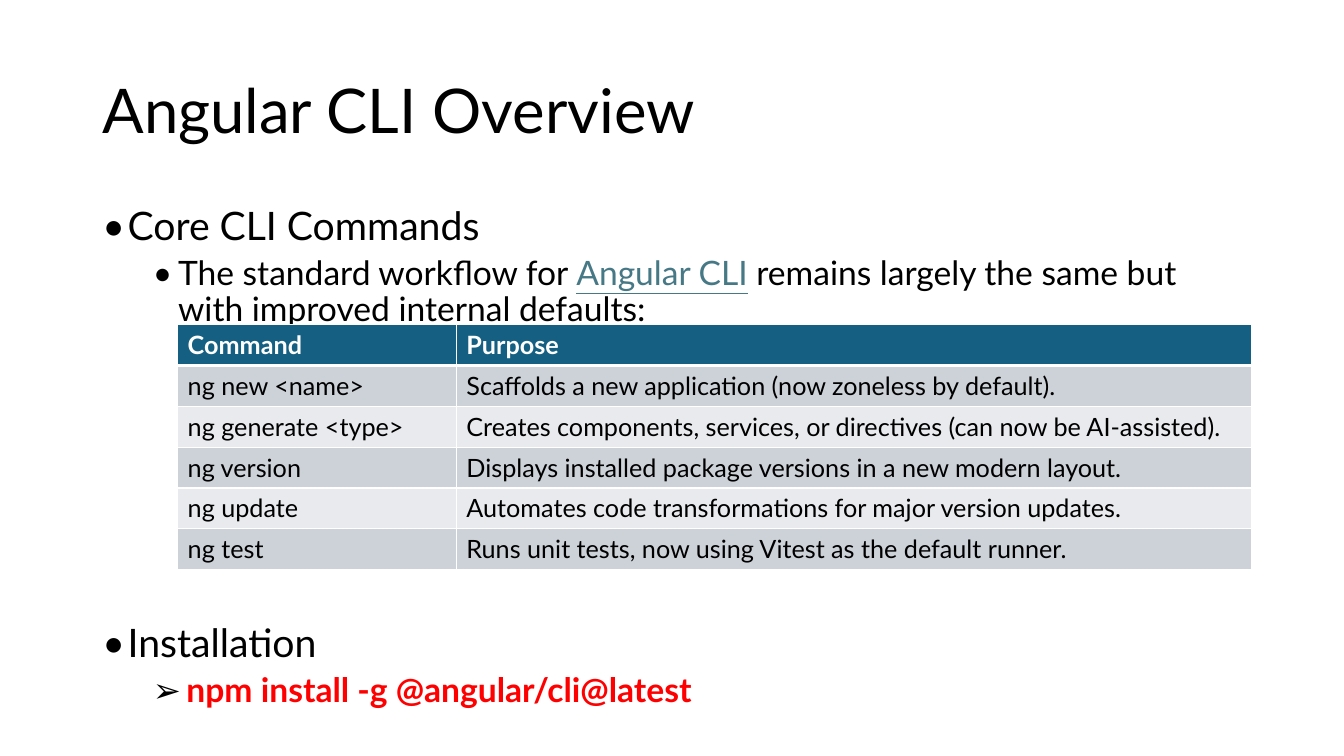
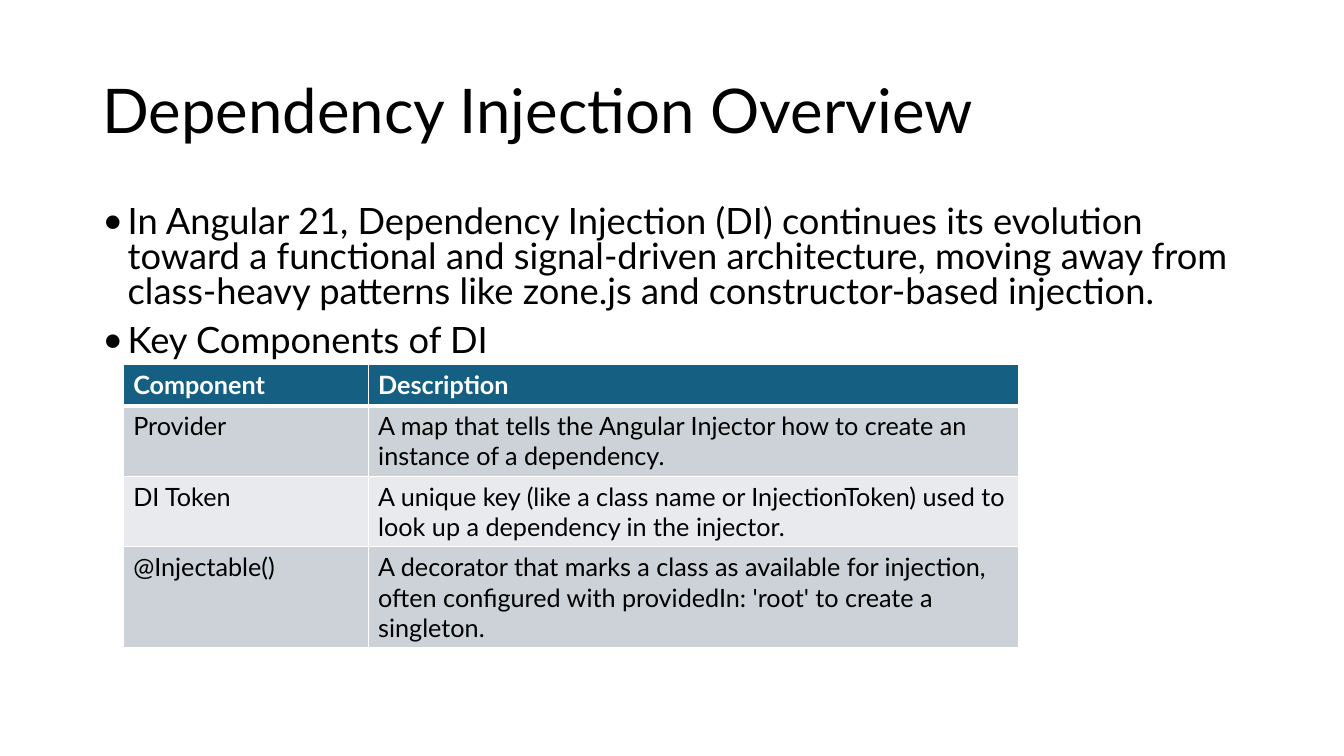
"""Build two Angular overview slides, each with a bullet list and a table."""
from dataclasses import dataclass

import lxml.etree
import pptx
import pptx.dml.color
import pptx.enum.text
import pptx.oxml.ns
import pptx.presentation
import pptx.shapes.autoshape
import pptx.slide
import pptx.table
import pptx.text.text
import pptx.util

Pt = pptx.util.Pt
RGBColor = pptx.dml.color.RGBColor
qn = pptx.oxml.ns.qn

BLACK = RGBColor(0x00, 0x00, 0x00)
WHITE = RGBColor(0xFF, 0xFF, 0xFF)
RED = RGBColor(0xFF, 0x00, 0x00)
LINK = RGBColor(0x46, 0x78, 0x86)
HEADER = RGBColor(0x15, 0x60, 0x82)
BANDS = (RGBColor(0xCC, 0xD2, 0xD8), RGBColor(0xE8, 0xEA, 0xED))
FONT = "Lato"
LEFT, WIDTH = 66, 828
TITLE_TOP, TITLE_HEIGHT = 28.8, 104.4
BODY_TOP = 144
HANGING = 18


@dataclass(frozen=True)
class Span:
    text: str
    color: RGBColor = BLACK
    bold: bool = False
    underline: bool = False


@dataclass(frozen=True)
class Bullet:
    spans: tuple[Span, ...]
    size: float
    level: int = 0
    before: float = 10
    symbol: str = "•"
    margin: float = 18
    hanging: float = HANGING


@dataclass(frozen=True)
class Grid:
    left: float
    top: float
    widths: tuple[float, ...]
    heights: tuple[float, ...]
    rows: tuple[tuple[str, ...], ...]


@dataclass(frozen=True)
class Page:
    title: str
    bullets: tuple[Bullet, ...]
    body_height: float
    line_spacing: float
    grid: Grid


PAGES = (
    Page(
        "Angular CLI Overview",
        (
            Bullet((Span("Core CLI Commands"),), 28),
            Bullet(
                (
                    Span("The standard workflow for "),
                    Span("Angular CLI", color=LINK, underline=True),
                    Span(" remains largely the same but with improved internal defaults:"),
                ),
                24, level=1, before=5, margin=54,
            ),
            Bullet((Span("Installation"),), 28, before=211),
            Bullet(
                (Span("npm install -g @angular/cli@latest", color=RED, bold=True),),
                24, level=1, before=5, symbol="➢", margin=60, hanging=24,
            ),
        ),
        396, 0.9,
        Grid(
            126.9, 231.8, (199.1, 568), (29.2,) * 6,
            (
                ("Command", "Purpose"),
                ("ng new <name>", "Scaffolds a new application (now zoneless by default)."),
                ("ng generate <type>",
                 "Creates components, services, or directives (can now be AI-assisted)."),
                ("ng version", "Displays installed package versions in a new modern layout."),
                ("ng update", "Automates code transformations for major version updates."),
                ("ng test", "Runs unit tests, now using Vitest as the default runner."),
            ),
        ),
    ),
    Page(
        "Dependency Injection Overview",
        (
            Bullet(
                (Span("In Angular 21, Dependency Injection (DI) continues its evolution toward "
                      "a functional and signal-driven architecture, moving away from "
                      "class-heavy patterns like zone.js and constructor-based injection."),),
                25.9,
            ),
            Bullet((Span("Key Components of DI"),), 25.9),
        ),
        126, 0.8,
        Grid(
            88, 260.6, (175, 464.6), (29.2, 50.4, 50.4, 72),
            (
                ("Component", "Description"),
                ("Provider",
                 "A map that tells the Angular Injector how to create an instance of a dependency."),
                ("DI Token",
                 "A unique key (like a class name or InjectionToken) used to look up "
                 "a dependency in the injector."),
                ("@Injectable()",
                 "A decorator that marks a class as available for injection, often configured "
                 "with providedIn: 'root' to create a singleton."),
            ),
        ),
    ),
)


def add_text(para: pptx.text.text._Paragraph, text: str, *, size: float,
             color: RGBColor = BLACK, bold: bool = False, underline: bool = False) -> None:
    """Append one formatted span to a paragraph."""
    span = para.add_run()
    span.text = text
    span.font.name = FONT
    span.font.size = Pt(size)
    span.font.color.rgb = color
    span.font.bold = bold
    span.font.underline = underline


def place(box: pptx.shapes.autoshape.Shape, top: float, height: float,
          anchor: pptx.enum.text.MSO_ANCHOR) -> pptx.text.text.TextFrame:
    """Move a placeholder to the shared column and return its text frame."""
    box.left, box.top, box.width, box.height = Pt(LEFT), Pt(top), Pt(WIDTH), Pt(height)
    frame = box.text_frame
    frame.auto_size = pptx.enum.text.MSO_AUTO_SIZE.NONE
    frame.word_wrap = True
    frame.vertical_anchor = anchor
    return frame


def set_bullet(para: pptx.text.text._Paragraph, bullet: Bullet) -> None:
    """Give a paragraph its hanging indent and black bullet symbol."""
    properties = para._p.get_or_add_pPr()
    properties.set("marL", str(Pt(bullet.margin)))
    properties.set("indent", str(Pt(-bullet.hanging)))
    tint = lxml.etree.SubElement(properties, qn("a:buClr"))
    lxml.etree.SubElement(tint, qn("a:srgbClr"), val=str(BLACK))
    lxml.etree.SubElement(properties, qn("a:buFont"), typeface=FONT)
    lxml.etree.SubElement(properties, qn("a:buChar"), char=bullet.symbol)


def fill_body(frame: pptx.text.text.TextFrame, page: Page) -> None:
    """Write the bullet list of a page."""
    for index, bullet in enumerate(page.bullets):
        para = frame.add_paragraph() if index else frame.paragraphs[0]
        para.level = bullet.level
        para.line_spacing = page.line_spacing
        para.space_before = Pt(bullet.before if index else 0)
        set_bullet(para, bullet)
        for span in bullet.spans:
            add_text(para, span.text, size=bullet.size, color=span.color,
                     bold=span.bold, underline=span.underline)


def set_borders(cell: pptx.table._Cell, row: int) -> None:
    """Draw white cell borders, with a thick rule under the header row."""
    properties = cell._tc.get_or_add_tcPr()
    widths = {"L": 1, "R": 1, "T": 3 if row == 1 else 1, "B": 3 if row == 0 else 1}
    for side, width in widths.items():
        line = lxml.etree.SubElement(properties, qn(f"a:ln{side}"), w=str(Pt(width)))
        fill = lxml.etree.SubElement(line, qn("a:solidFill"))
        lxml.etree.SubElement(fill, qn("a:srgbClr"), val=str(WHITE))


def draw_grid(slide: pptx.slide.Slide, grid: Grid) -> None:
    """Add a table with a dark header and alternating bands."""
    table = slide.shapes.add_table(
        len(grid.rows), len(grid.widths), Pt(grid.left), Pt(grid.top),
        Pt(sum(grid.widths)), Pt(sum(grid.heights))).table
    for column, width in zip(table.columns, grid.widths):
        column.width = Pt(width)
    for row, (height, texts) in enumerate(zip(grid.heights, grid.rows)):
        table.rows[row].height = Pt(height)
        is_header = row == 0
        for column, text in enumerate(texts):
            cell = table.cell(row, column)
            set_borders(cell, row)
            cell.fill.solid()
            cell.fill.fore_color.rgb = HEADER if is_header else BANDS[(row - 1) % 2]
            add_text(cell.text_frame.paragraphs[0], text, size=18,
                     color=WHITE if is_header else BLACK, bold=is_header)


def draw_page(deck: pptx.presentation.Presentation, page: Page) -> None:
    """Add one slide with its title, list and table."""
    slide = deck.slides.add_slide(deck.slide_layouts[1])
    title = place(slide.shapes.title, TITLE_TOP, TITLE_HEIGHT,
                  pptx.enum.text.MSO_ANCHOR.MIDDLE)
    para = title.paragraphs[0]
    para.alignment = pptx.enum.text.PP_ALIGN.LEFT
    para.line_spacing = 0.9
    add_text(para, page.title, size=44)
    body = place(slide.placeholders[1], BODY_TOP, page.body_height,
                 pptx.enum.text.MSO_ANCHOR.TOP)
    fill_body(body, page)
    draw_grid(slide, page.grid)


def main() -> None:
    """Build and save the deck."""
    deck = pptx.Presentation()
    deck.slide_width, deck.slide_height = Pt(960), Pt(540)
    for page in PAGES:
        draw_page(deck, page)
    deck.save("out.pptx")


if __name__ == "__main__":
    main()
